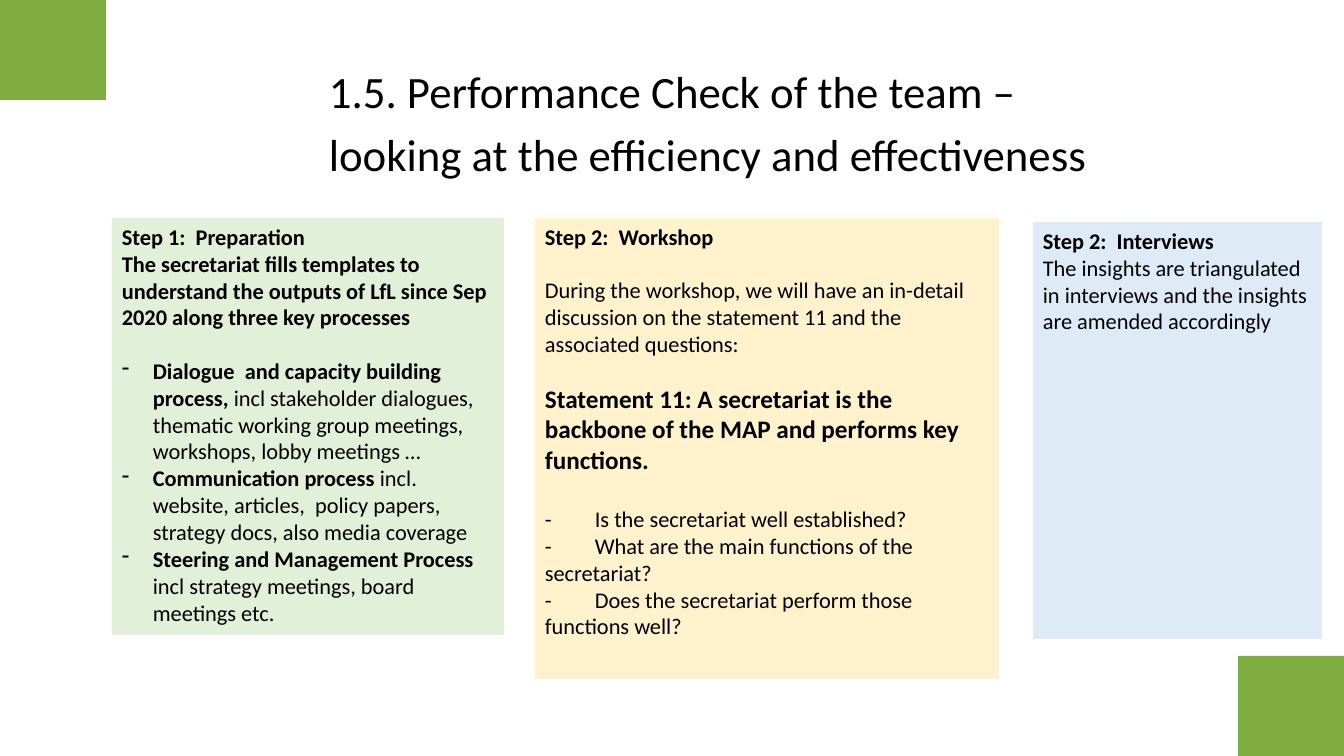
import pptx
import pptx.util
import pptx.dml.color
import pptx.enum.shapes
import pptx.enum.text
import pptx.oxml.ns
import lxml.etree

RGB = pptx.dml.color.RGBColor
GREEN = RGB(0x80, 0xAD, 0x40)
PALE_GREEN = RGB(0xE2, 0xF0, 0xD9)
PALE_YELLOW = RGB(0xFF, 0xF2, 0xCC)
PALE_BLUE = RGB(0xDE, 0xEB, 0xF7)
BLACK = RGB(0, 0, 0)
FONT = "Calibri"

SLIDE_W, SLIDE_H = 1344, 756
CORNER_W, CORNER_H = 106, 100
BULLET_INDENT = 31
TAB_STOP = 50
LINE_GAP = 19
WIDE_GAP = 22

TITLE_BOX = (319, 65, 814, 77)
TITLE = [
    "1.5. Performance Check of the team –",
    "looking at the efficiency and effectiveness",
]

PREPARATION = [
    dict(bold="Step 1:  Preparation"),
    dict(bold="The secretariat fills templates to understand the outputs of LfL "
              "since Sep 2020 along three key processes"),
    dict(bold="Dialogue  and capacity building process, ",
         plain="incl stakeholder dialogues, thematic working group meetings, "
               "workshops, lobby meetings …", bullet=True, before=LINE_GAP),
    dict(bold="Communication process ",
         plain="incl. website, articles,  policy papers, strategy docs, "
               "also media coverage", bullet=True),
    dict(bold="Steering and Management Process ",
         plain="incl strategy meetings, board meetings etc.", bullet=True),
]
WORKSHOP = [
    dict(bold="Step 2:  Workshop"),
    dict(plain="During the workshop, we will have an in-detail discussion on the "
               "statement 11 and the associated questions:", before=LINE_GAP),
    dict(bold="Statement 11: A secretariat is the backbone of the MAP and "
              "performs key functions.", size=18, before=LINE_GAP),
    dict(plain="-\tIs the secretariat well established?", tab=True, before=WIDE_GAP),
    dict(plain="-\tWhat are the main functions of the secretariat?", tab=True),
    dict(plain="-\tDoes the secretariat perform those functions well?", tab=True),
]
INTERVIEWS = [
    dict(bold="Step 2:  Interviews"),
    dict(plain="The insights are triangulated in interviews and the insights "
               "are amended accordingly"),
]
STEPS = [
    ((535, 218, 464, 461), PALE_YELLOW, WORKSHOP),
    ((112, 218, 392, 417), PALE_GREEN, PREPARATION),
    ((1033, 222, 289, 417), PALE_BLUE, INTERVIEWS),
]


def px(length):
    return round(length * 914400 / 100.8)


def add_element(parent, tag, **attributes):
    return lxml.etree.SubElement(parent, pptx.oxml.ns.qn(tag), attributes)


def add_paragraph(frame, first, bold="", plain="", size=16, before=0,
                  spacing=None, bullet=False, tab=False):
    paragraph = frame.paragraphs[0] if first else frame.add_paragraph()
    properties = paragraph._p.get_or_add_pPr()
    if bullet:
        properties.set("marL", str(px(BULLET_INDENT)))
        properties.set("indent", str(-px(BULLET_INDENT)))
        add_element(properties, "a:buFontTx")
        add_element(properties, "a:buChar", char="-")
    if tab:
        stops = add_element(properties, "a:tabLst")
        add_element(stops, "a:tab", pos=str(px(TAB_STOP)), algn="l")
    paragraph.alignment = pptx.enum.text.PP_ALIGN.LEFT
    if before and not first:
        paragraph.space_before = pptx.util.Pt(before)
    if spacing:
        paragraph.line_spacing = spacing
    for words, weight in ((bold, True), (plain, False)):
        if words:
            run = paragraph.add_run()
            run.text = words
            run.font.name = FONT
            run.font.size = pptx.util.Pt(size)
            run.font.bold = weight
            run.font.color.rgb = BLACK


def add_panel(slide, box, fill):
    panel = slide.shapes.add_shape(
        pptx.enum.shapes.MSO_SHAPE.RECTANGLE, *map(px, box))
    panel.shadow.inherit = False
    panel.fill.solid()
    panel.fill.fore_color.rgb = fill
    panel.line.fill.background()
    return panel


def fill_frame(frame, paragraphs):
    frame.word_wrap = True
    frame.vertical_anchor = pptx.enum.text.MSO_ANCHOR.TOP
    for index, content in enumerate(paragraphs):
        add_paragraph(frame, index == 0, **content)


def main():
    deck = pptx.Presentation()
    deck.slide_width, deck.slide_height = px(SLIDE_W), px(SLIDE_H)
    slide = deck.slides.add_slide(deck.slide_layouts[6])

    for left, top in ((0, 0), (SLIDE_W - CORNER_W, SLIDE_H - CORNER_H)):
        add_panel(slide, (left, top, CORNER_W, CORNER_H), GREEN)

    title = slide.shapes.add_textbox(*map(px, TITLE_BOX))
    fill_frame(title.text_frame, [
        dict(plain=line, size=32, before=10, spacing=0.9) for line in TITLE])

    for box, fill, paragraphs in STEPS:
        fill_frame(add_panel(slide, box, fill).text_frame, paragraphs)

    deck.save("out.pptx")


if __name__ == "__main__":
    main()
